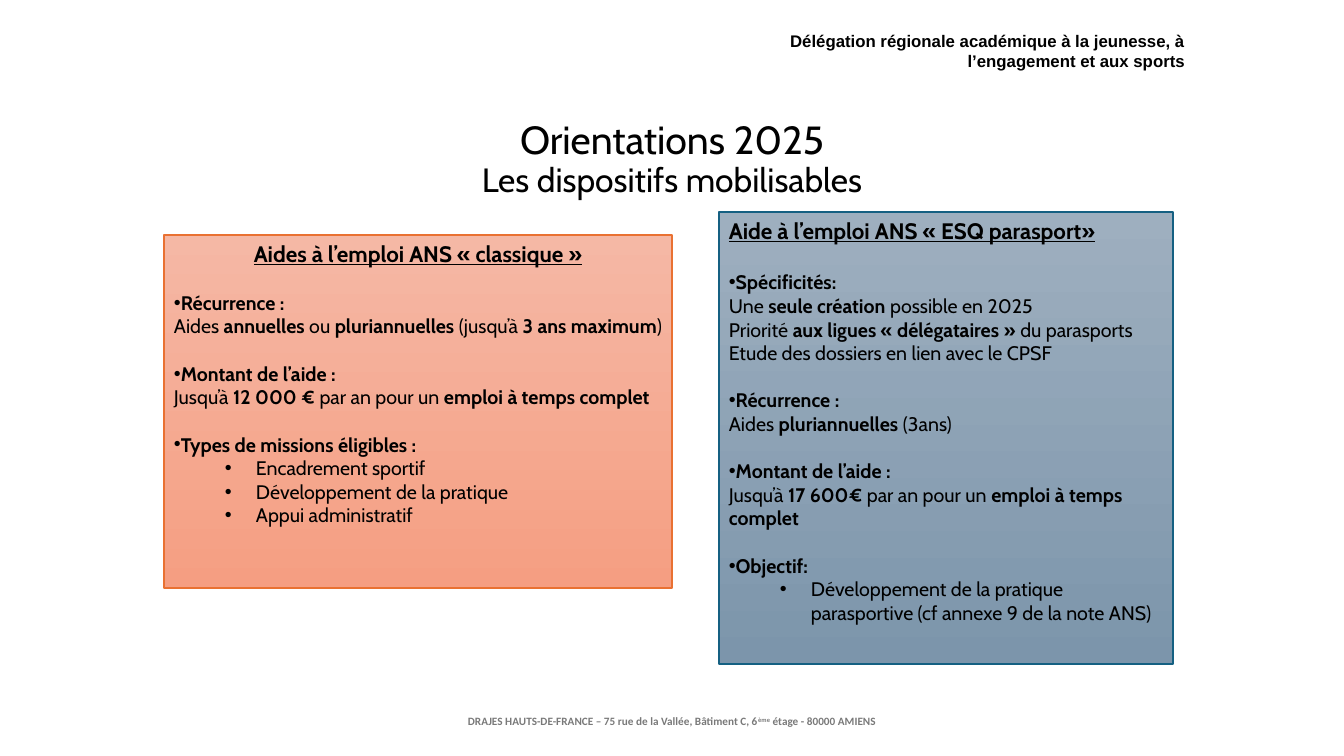
import pptx
import pptx.dml.color
import pptx.enum.shapes
import pptx.enum.text
import pptx.oxml
import pptx.oxml.ns
import pptx.util

PX = 914400 / 100.8
ALIGN = pptx.enum.text.PP_ALIGN
ANCHOR = pptx.enum.text.MSO_ANCHOR
NO_FIT = pptx.enum.text.MSO_AUTO_SIZE.NONE

CLASSIC = [
    ("heading", "Aides à l’emploi ANS « classique »"),
    ("topic", "Récurrence :"),
    ("plain", "Aides **annuelles** ou **pluriannuelles** (jusqu’à **3 ans maximum**)"),
    ("topic", "Montant de l’aide :"),
    ("plain", "Jusqu’à **12 000 €** par an pour un **emploi à temps complet**"),
    ("topic", "Types de missions éligibles :"),
    ("item", "Encadrement sportif"),
    ("item", "Développement de la pratique"),
    ("item", "Appui administratif"),
]
PARASPORT = [
    ("heading", "Aide à l’emploi ANS « ESQ parasport»"),
    ("topic", "Spécificités:"),
    ("plain", "Une** seule création **possible en 2025"),
    ("plain", "Priorité **aux ligues « délégataires » **du parasports "),
    ("plain", "Etude des dossiers en lien avec le CPSF"),
    ("topic", "Récurrence :"),
    ("plain", "Aides **pluriannuelles** (3ans)"),
    ("topic", "Montant de l’aide :"),
    ("plain", "Jusqu’à **17 600€** par an pour un **emploi à temps complet**"),
    ("topic", "Objectif:"),
    ("item", "Développement de la pratique parasportive (cf annexe 9 de la note ANS)"),
]
ROLES = {
    "heading": {"size": pptx.util.Pt(16), "bold": True, "underline": True},
    "topic": {"size": pptx.util.Pt(14), "bold": True},
    "plain": {"size": pptx.util.Pt(14)},
    "item": {"size": pptx.util.Pt(14)},
}


def px(length):
    return round(length * PX)


def color(code):
    return pptx.dml.color.RGBColor.from_string(code)


def apply(target, values):
    for name, value in values.items():
        setattr(target, name, value)


def place(shape, box):
    apply(shape, dict(zip(("left", "top", "width", "height"), map(px, box))))


def write(paragraph, text, font, ink="000000"):
    for index, part in enumerate(text.split("**")):
        if part:
            run = paragraph.add_run()
            run.text = part
            apply(run.font, {"name": "Cabin", "bold": index % 2 == 1, **font})
            run.font.color.rgb = color(ink)


def bullet(paragraph, margin=0, hanging=0):
    properties = paragraph._p.get_or_add_pPr()
    properties.set("marL", str(px(margin)))
    properties.set("indent", str(-px(hanging)))
    namespace = pptx.oxml.ns.nsdecls("a")
    for markup in (f'<a:buFont {namespace} typeface="Arial"/>',
                   f'<a:buChar {namespace} char="•"/>'):
        properties.append(pptx.oxml.parse_xml(markup))


def add_title(slide, box):
    title = slide.shapes.title
    place(title, box)
    frame = title.text_frame
    apply(frame, {"vertical_anchor": ANCHOR.MIDDLE, "word_wrap": True, "auto_size": NO_FIT})
    lines = [("Orientations 2025", 28), ("Les dispositifs mobilisables", 24)]
    for index, (text, size) in enumerate(lines):
        line = frame.add_paragraph() if index else frame.paragraphs[0]
        apply(line, {"alignment": ALIGN.CENTER, "line_spacing": 0.9,
                     "space_before": pptx.util.Pt(0)})
        write(line, text, {"size": pptx.util.Pt(size)})


def add_label(slide, box, alignment, anchor):
    label = slide.shapes.add_textbox(*map(px, box))
    apply(label.text_frame, {"word_wrap": True, "vertical_anchor": anchor})
    line = label.text_frame.paragraphs[0]
    line.alignment = alignment
    return line


def add_header(slide, box):
    line = add_label(slide, box, ALIGN.RIGHT, ANCHOR.TOP)
    write(line, "Délégation régionale académique à la jeunesse, à l’engagement et aux sports",
          {"name": "Arial", "size": pptx.util.Pt(12), "bold": True})


def add_address(slide, box):
    line = add_label(slide, box, ALIGN.CENTER, ANCHOR.MIDDLE)
    font = {"name": "Calibri", "size": pptx.util.Pt(8), "bold": True}
    for text in ("DRAJES HAUTS-DE-FRANCE – 75 rue de la Vallée, Bâtiment C, 6",
                 "ème", " étage - 80000 AMIENS"):
        write(line, text, font, "797979")
    line.runs[1]._r.get_or_add_rPr().set("baseline", "30000")


def add_scheme(slide, box, content, shades, border, heading_align, first_gap):
    panel = slide.shapes.add_shape(pptx.enum.shapes.MSO_SHAPE.RECTANGLE, *map(px, box))
    panel.shadow.inherit = False
    panel.fill.gradient()
    panel.fill.gradient_angle = 270
    for stop, shade in zip(panel.fill.gradient_stops, shades):
        stop.color.rgb = color(shade)
    panel.line.color.rgb = color(border)
    panel.line.width = pptx.util.Pt(1)
    frame = panel.text_frame
    apply(frame, {"word_wrap": True, "vertical_anchor": ANCHOR.TOP})
    gap = first_gap
    for index, (role, text) in enumerate(content):
        line = frame.add_paragraph() if index else frame.paragraphs[0]
        line.alignment = heading_align if role == "heading" else ALIGN.LEFT
        if role == "topic":
            line.space_before = pptx.util.Pt(gap)
            gap = 17
            bullet(line)
        elif role == "item":
            line.level = 1
            bullet(line, 82, 31)
        write(line, text, ROLES[role])


def main():
    deck = pptx.Presentation()
    apply(deck, {"slide_width": px(1344), "slide_height": px(756)})
    slide = deck.slides.add_slide(deck.slide_layouts[5])
    add_title(slide, (169, 107, 1006, 106))
    add_address(slide, (445, 701, 454, 40))
    add_scheme(slide, (164, 235, 508, 353), CLASSIC, ("F5B8A5", "F59E82"),
               "E97132", ALIGN.CENTER, 17)
    add_scheme(slide, (719, 212, 454, 452), PARASPORT, ("9EAFBF", "7C95AB"),
               "156082", ALIGN.LEFT, 19)
    add_header(slide, (695, 26, 500, 50))
    deck.save("out.pptx")


if __name__ == "__main__":
    main()
